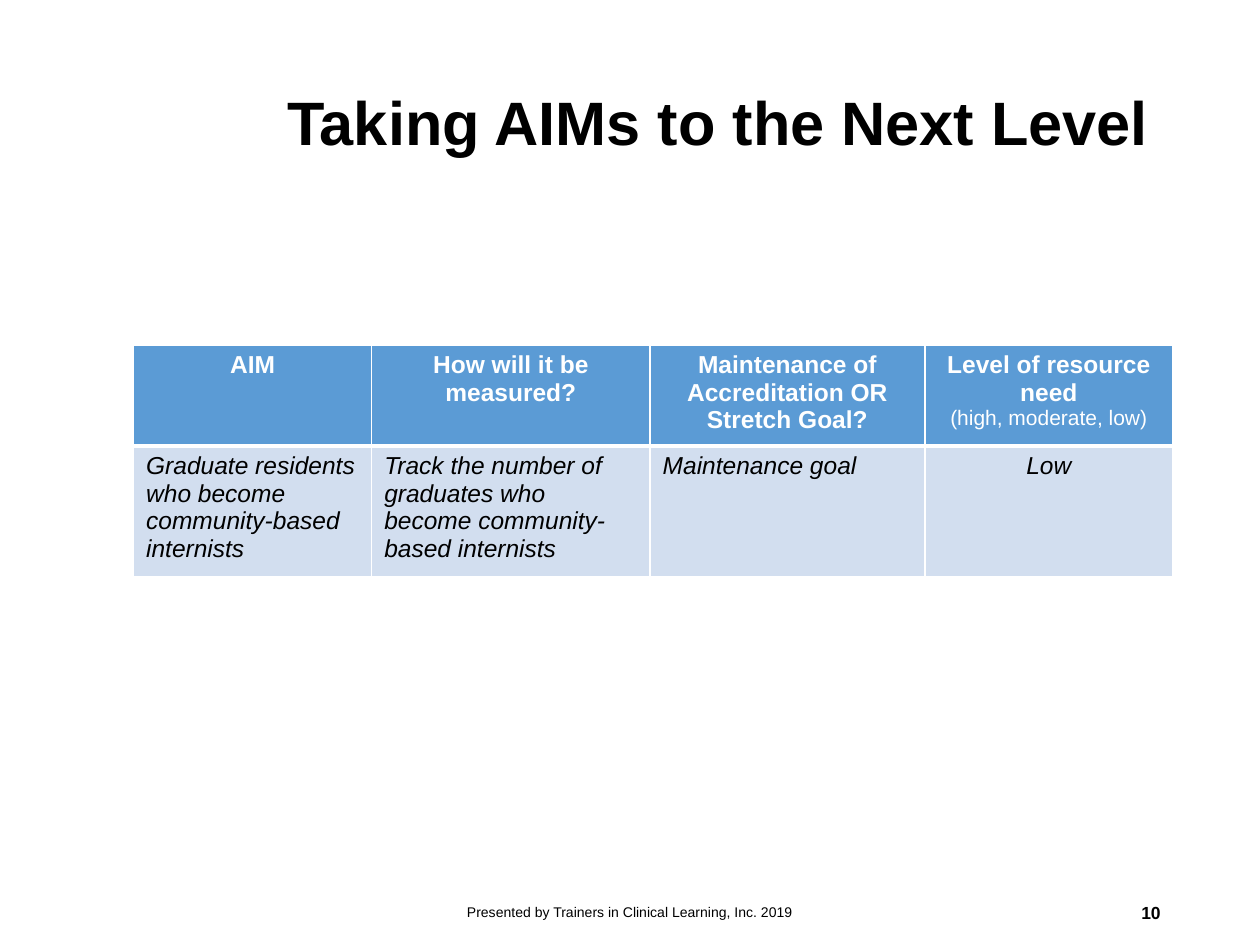
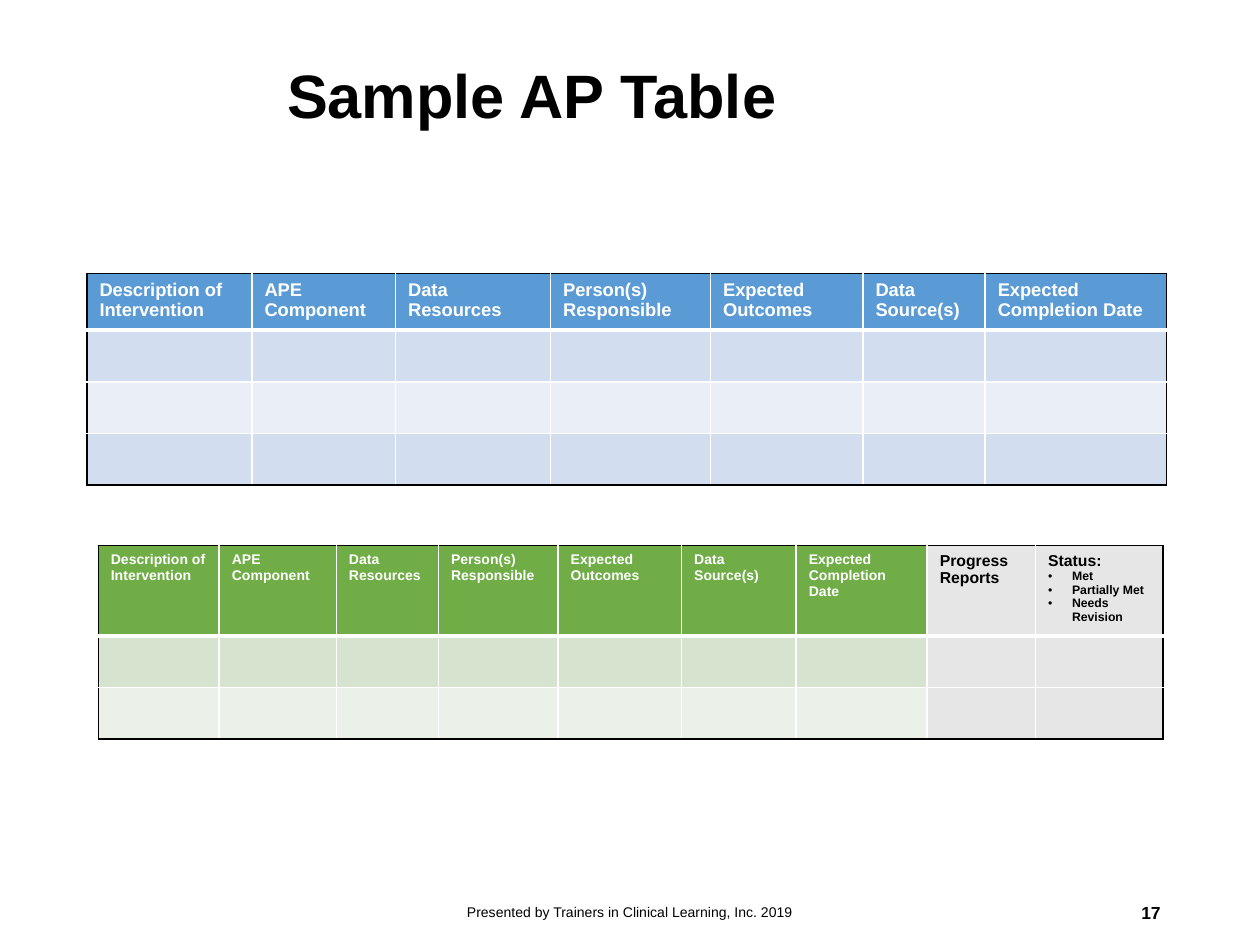
"""Build two slides of tables on programme aims and action plans."""
from dataclasses import dataclass, replace

from lxml import etree
from pptx import Presentation
from pptx.dml.color import RGBColor
from pptx.enum import text
from pptx.oxml import ns
from pptx.util import Emu, Pt

PX = 9144
FONT = "Arial"
COLORS = {
    "black": "000000", "white": "FFFFFF", "grey": "E7E6E6",
    "blue": "5B9BD5", "blue_mid": "D2DEEF", "blue_pale": "EAEFF7",
    "green": "70AD47", "green_mid": "D5E3CF", "green_pale": "EBF1E9",
}
BLUES = ("blue", "blue_mid", "blue_pale")
GREENS = ("green", "green_mid", "green_pale")
LEFT, CENTER, RIGHT = text.PP_ALIGN.LEFT, text.PP_ALIGN.CENTER, text.PP_ALIGN.RIGHT
FOOTER = "Presented by Trainers in Clinical Learning, Inc. 2019"
ROW_H = 41
BULLET_INDENT = 19
PLAN_HEADINGS = (
    "Description of Intervention", "APE Component", "Data Resources",
    "Person(s) Responsible", "Expected Outcomes", "Data Source(s)",
    "Expected Completion Date",
)


@dataclass(frozen=True)
class Para:
    """A paragraph with one style."""
    words: str
    size: float
    color: str = "black"
    bold: bool = False
    italic: bool = False
    align: text.PP_ALIGN = LEFT
    bullet: bool = False
    spacing: float = 1.0


@dataclass(frozen=True)
class Box:
    """A text frame's place and vertical insets in px."""
    x: int
    y: int
    w: int
    h: int
    top: int = 5
    bottom: int = 5


@dataclass(frozen=True)
class Grid:
    """A table: place, column widths, cell texts and colours."""
    x: int
    y: int
    cols: tuple[int, ...]
    rows: list[list[list[Para]]]
    bands: tuple[str, str, str]
    edge: str
    grey_cols: int = 0


TITLE = Box(218, 27, 714, 145, 10, 10)
NUMBER_BOX = Box(706, 704, 225, 40)
FOOTER_BOX = Box(331, 704, 338, 40)


def px(n: int) -> Emu:
    """Turn px into EMU."""
    return Emu(n * PX)


def rgb(name: str) -> RGBColor:
    """Look up a named colour."""
    return RGBColor.from_string(COLORS[name])


def add_bullet(p) -> None:
    """Give a paragraph a hanging round bullet."""
    pr = p._p.get_or_add_pPr()
    pr.set("marL", str(px(BULLET_INDENT)))
    pr.set("indent", str(-px(BULLET_INDENT)))
    etree.SubElement(pr, ns.qn("a:buFont"), typeface=FONT)
    etree.SubElement(pr, ns.qn("a:buChar"), char="•")


def write(tf, paras: list[Para]) -> None:
    """Write styled paragraphs into a text frame."""
    tf.word_wrap = True
    for i, para in enumerate(paras):
        p = tf.add_paragraph() if i else tf.paragraphs[0]
        p.alignment = para.align
        p.line_spacing = para.spacing
        if para.bullet:
            add_bullet(p)
        r = p.add_run()
        r.text = para.words
        font = r.font
        font.name, font.size = FONT, Pt(para.size)
        font.bold, font.italic = para.bold, para.italic
        font.color.rgb = rgb(para.color)


def add_text(s, box: Box, para: Para) -> None:
    """Add a vertically centred text box."""
    tf = s.shapes.add_textbox(px(box.x), px(box.y), px(box.w), px(box.h)).text_frame
    tf.vertical_anchor = text.MSO_ANCHOR.MIDDLE
    tf.margin_left = tf.margin_right = px(10)
    tf.margin_top, tf.margin_bottom = px(box.top), px(box.bottom)
    write(tf, [para])


def set_borders(cell, sides: dict[str, tuple[str, int]]) -> None:
    """Draw cell borders given as side: (colour, points)."""
    pr = cell._tc.get_or_add_tcPr()
    for i, side in enumerate("LRTB"):
        color, width = sides[side]
        ln = etree.Element(ns.qn(f"a:ln{side}"), w=str(Pt(width)))
        fill = etree.SubElement(ln, ns.qn("a:solidFill"))
        etree.SubElement(fill, ns.qn("a:srgbClr"), val=COLORS[color])
        pr.insert(i, ln)


def add_grid(s, grid: Grid) -> None:
    """Add a table with a header row, banded rows and a framed edge."""
    n_rows, n_cols = len(grid.rows), len(grid.cols)
    tbl = s.shapes.add_table(n_rows, n_cols, px(grid.x), px(grid.y),
                             px(sum(grid.cols)), px(ROW_H * n_rows)).table
    tbl.first_row = tbl.horz_banding = False
    for col, width in zip(tbl.columns, grid.cols):
        col.width = px(width)
    for i, row in enumerate(grid.rows):
        tbl.rows[i].height = px(ROW_H)
        band = grid.bands[0 if i == 0 else 2 - i % 2]
        for j, paras in enumerate(row):
            cell = tbl.cell(i, j)
            cell.fill.solid()
            cell.fill.fore_color.rgb = rgb(
                "grey" if j >= n_cols - grid.grey_cols else band)
            set_borders(cell, {
                "L": (grid.edge if j == 0 else "white", 1),
                "R": (grid.edge if j == n_cols - 1 else "white", 1),
                "T": (grid.edge if i == 0 else "white", 3 if i == 1 else 1),
                "B": (grid.edge if i == n_rows - 1 else "white", 3 if i == 0 else 1),
            })
            if paras:
                write(cell.text_frame, paras)


def add_slide(prs, title: str, number: int, title_box: Box, grids: list[Grid]) -> None:
    """Add a slide with its title, tables, number and footer."""
    s = prs.slides.add_slide(prs.slide_layouts[6])
    add_text(s, title_box, Para(title, 35, bold=True, spacing=0.9))
    for grid in grids:
        add_grid(s, grid)
    add_text(s, NUMBER_BOX, Para(str(number), 10, bold=True, align=RIGHT))
    add_text(s, FOOTER_BOX, Para(FOOTER, 8, align=CENTER))


def aims_grid() -> Grid:
    """Describe the table of aims."""
    head = Para("", 14, "white", bold=True, align=CENTER)
    body = Para("", 14, italic=True)
    headings = [
        ["AIM"], ["How will it be measured?"],
        ["Maintenance of Accreditation OR", "Stretch Goal?"],
        ["Level of resource need"],
    ]
    header = [[replace(head, words=w) for w in words] for words in headings]
    header[-1].append(Para("(high, moderate, low)", 12, "white", align=CENTER))
    answers = [[replace(body, words=w)] for w in (
        "Graduate residents who become community-based internists",
        "Track the number of graduates who become community-based internists",
        "Maintenance goal",
    )]
    answers.append([replace(body, words="Low", align=CENTER)])
    return Grid(106, 274, (189, 221, 218, 197), [header, answers], BLUES, "white")


def plan_header(size: float) -> list[list[Para]]:
    """Make the header cells of an action plan."""
    return [[Para(w, size, "white", bold=True)] for w in PLAN_HEADINGS]


def plan_grids() -> list[Grid]:
    """Describe the plain plan and the plan with follow-up columns."""
    status = [Para("Status:", 9, bold=True)]
    status += [Para(w, 7, bold=True, bullet=True)
               for w in ("Met", "Partially Met", "Needs Revision")]
    follow_up = [[Para("Progress Reports", 9, bold=True)], status]
    plan = [plan_header(10.5)] + [[[]] * 7] * 3
    tracked = [plan_header(8) + follow_up] + [[[]] * 9] * 2
    return [
        Grid(69, 217, (131, 114, 123, 127, 121, 97, 144), plan, BLUES, "black"),
        Grid(78, 433, (96, 93, 81, 95, 98, 91, 104, 86, 101), tracked, GREENS,
             "black", grey_cols=2),
    ]


def main() -> None:
    """Build and save the slides."""
    prs = Presentation()
    prs.slide_width, prs.slide_height = px(1000), px(750)
    add_slide(prs, "Taking AIMs to the Next Level", 10, TITLE, [aims_grid()])
    add_slide(prs, "Sample AP Table", 17, replace(TITLE, bottom=52), plan_grids())
    prs.save("out.pptx")


if __name__ == "__main__":
    main()
